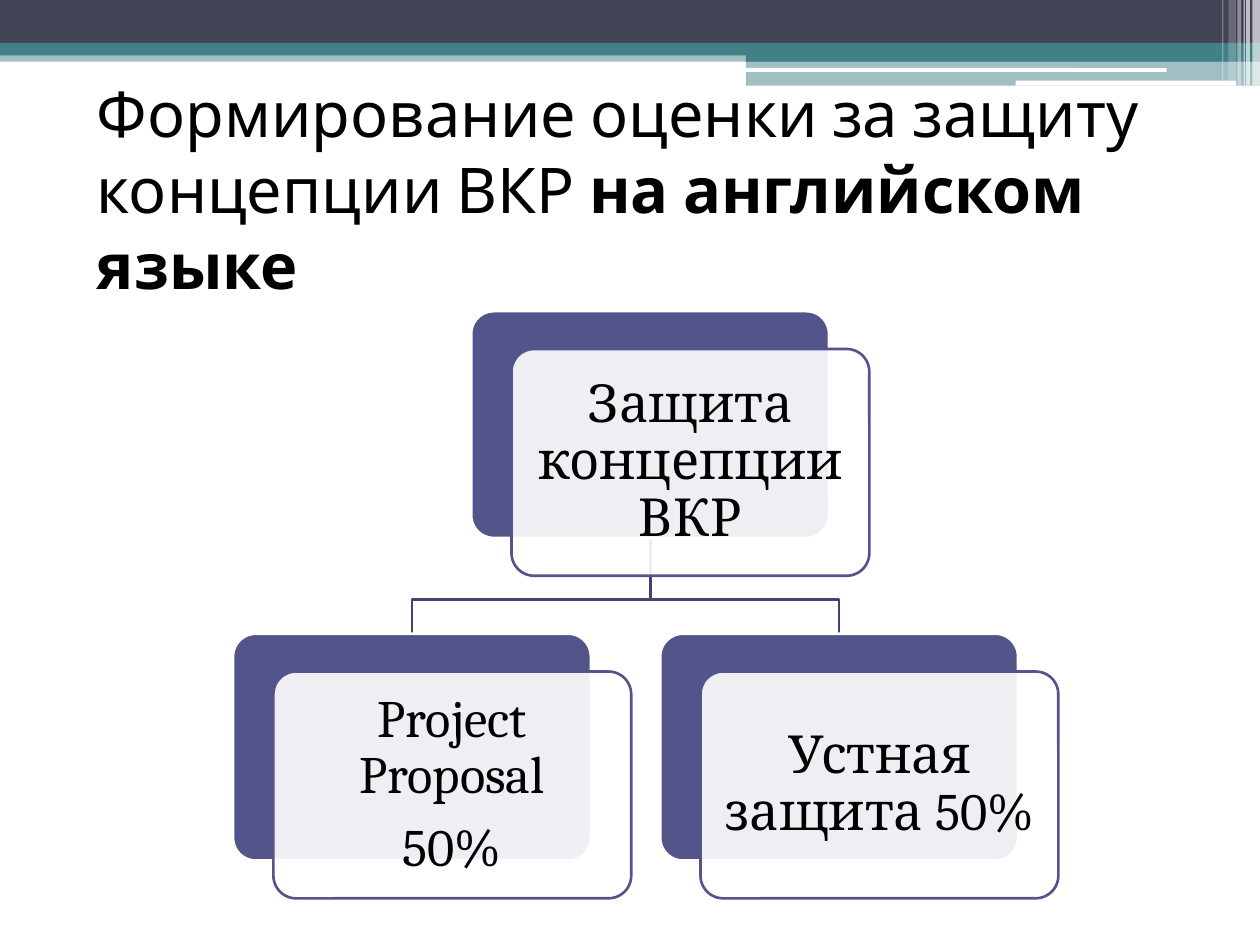
from lxml import etree
from pptx import Presentation
from pptx.dml.color import RGBColor
from pptx.enum.shapes import MSO_SHAPE
from pptx.enum.text import MSO_ANCHOR, PP_ALIGN
from pptx.oxml.ns import qn
from pptx.util import Inches, Pt

RECT, ROUND = MSO_SHAPE.RECTANGLE, MSO_SHAPE.ROUNDED_RECTANGLE
MIDDLE, CENTER = MSO_ANCHOR.MIDDLE, PP_ALIGN.CENTER
WHITE = RGBColor(0xFF, 0xFF, 0xFF)
BLACK = RGBColor(0x00, 0x00, 0x00)
SLATE = RGBColor(0x42, 0x44, 0x56)
TEAL = RGBColor(0x43, 0x80, 0x86)
VIOLET = RGBColor(0x53, 0x54, 0x8A)
BRANCH = RGBColor(0x42, 0x43, 0x6F)

prs = Presentation()
prs.slide_width, prs.slide_height = Inches(10), Inches(7.5)
slide = prs.slides.add_slide(prs.slide_layouts[6])
shapes = slide.shapes


def add_block(kind, left, top, width, height, color, opacity=100, outline=None):
    block = shapes.add_shape(kind, Inches(left), Inches(top), Inches(width), Inches(height))
    block.shadow.inherit = False
    block.fill.solid()
    block.fill.fore_color.rgb = color
    if opacity < 100:
        tint = block.fill._xPr.find(qn("a:solidFill"))[0]
        etree.SubElement(tint, qn("a:alpha"), val=str(opacity * 1000))
    if outline is None:
        block.line.fill.background()
    else:
        block.line.color.rgb = outline
        block.line.width = Pt(1.5)
    return block


# Header bands: left, top, width, height, colour, opacity
for band in [
    (0, 0.4, 10, 0.09, TEAL, 50),
    (0, 0, 10, 0.34, SLATE),
    (0, 0.34, 10, 0.1, TEAL),
    (5.92, 0.39, 4.08, 0.1, TEAL),
    (5.92, 0.48, 4.08, 0.2, TEAL, 50),
]:
    add_block(RECT, *band)
for bar in [(5.91, 0.54, 3.35, 0.03), (8.06, 0.64, 1.75, 0.04)]:
    add_block(ROUND, *bar, WHITE)

# Pale stripes in the corner: left, width, height, opacity
for left, width, height, opacity in [
    (9.94, 0.06, 0.68, 65),
    (9.89, 0.03, 0.68, 65),
    (9.87, 0.01, 0.68, 60),
    (9.82, 0.03, 0.68, 40),
    (9.75, 0.06, 0.64, 20),
    (9.7, 0.01, 0.64, 30),
]:
    add_block(RECT, left, 0, width, height, WHITE, opacity)

# Title
title = shapes.add_textbox(Inches(0.67), Inches(0.91), Inches(9), Inches(1.17)).text_frame
title.word_wrap = True
title.vertical_anchor = MIDDLE
heading = title.paragraphs[0]
heading.font.name, heading.font.size = "Cabin", Pt(36)
heading.font.color.rgb = BLACK
heading.add_run().text = "Формирование оценки за защиту концепции ВКР "
language = heading.add_run()
language.text = "на английском языке"
language.font.bold = True

# Hierarchy grid: the parent is centred over two children
CARD_W, CARD_H = 2.84, 1.8
SHIFT_X, SHIFT_Y = 0.32, 0.3
CHILD_LEFTS = (1.85, 5.24)
PARENT_LEFT = 3.74
PARENT_TOP, CHILD_TOP = 2.47, 5.03

# Branches from the parent to each child
trunk_x, trunk_top, fork_y = PARENT_LEFT + CARD_W / 2, PARENT_TOP + CARD_H, 4.76
for child_left in reversed(CHILD_LEFTS):
    child_x = child_left + CARD_W / 2
    builder = shapes.build_freeform(Inches(trunk_x), Inches(trunk_top))
    corners = [(trunk_x, fork_y), (child_x, fork_y), (child_x, CHILD_TOP)]
    builder.add_line_segments([(Inches(x), Inches(y)) for x, y in corners], close=False)
    branch = builder.convert_to_shape()
    branch.shadow.inherit = False
    branch.fill.background()
    branch.line.color.rgb = BRANCH
    branch.line.width = Pt(1.5)

# Cards: a solid back plate and a translucent front plate with the label
for left, top, lines in [
    (PARENT_LEFT, PARENT_TOP, ["Защита концепции ВКР"]),
    (CHILD_LEFTS[0], CHILD_TOP, ["Project Proposal", "50%"]),
    (CHILD_LEFTS[1], CHILD_TOP, ["Устная защита 50%"]),
]:
    back = add_block(ROUND, left, top, CARD_W, CARD_H, VIOLET, outline=WHITE)
    front = add_block(ROUND, left + SHIFT_X, top + SHIFT_Y, CARD_W, CARD_H, WHITE, 90, VIOLET)
    for plate in (back, front):
        plate.adjustments[0] = 0.1
    label = front.text_frame
    label.word_wrap = True
    label.vertical_anchor = MIDDLE
    label.margin_left = label.margin_right = Inches(0.12)
    label.margin_top = label.margin_bottom = Inches(0.12)
    for i, line in enumerate(lines):
        paragraph = label.add_paragraph() if i else label.paragraphs[0]
        paragraph.text = line
        paragraph.alignment = CENTER
        paragraph.line_spacing = 0.9
        if i:
            paragraph.space_before = Pt(9)
        paragraph.font.name, paragraph.font.size = "Cambria", Pt(30)
        paragraph.font.color.rgb = BLACK

prs.save("out.pptx")
